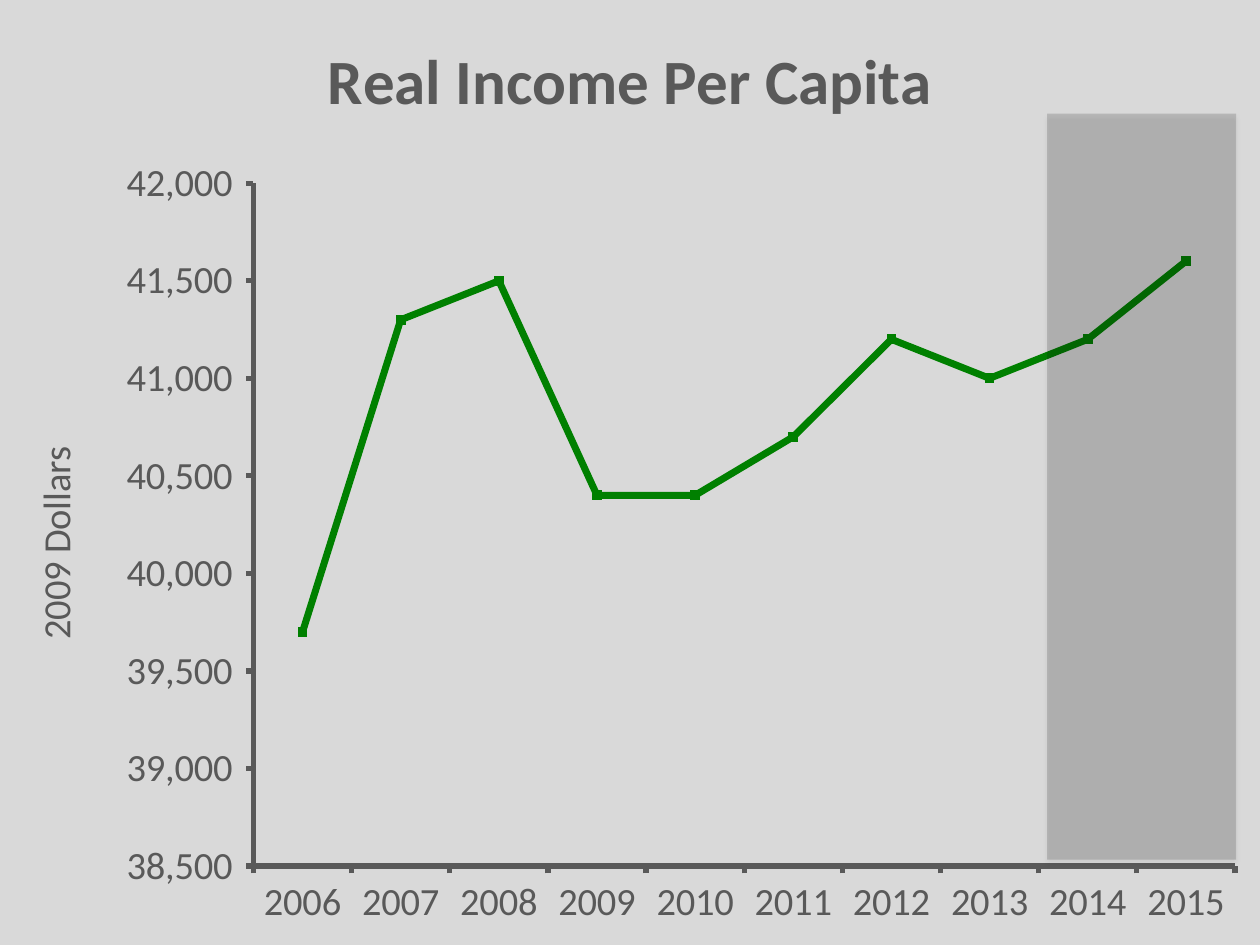
from lxml import etree
from pptx import Presentation
from pptx.chart.data import CategoryChartData
from pptx.dml.color import RGBColor
from pptx.enum import chart as ch, shapes
from pptx.oxml import parse_xml
from pptx.oxml.ns import nsdecls, qn
from pptx.util import Cm, Pt

TITLE = "Real Income Per Capita"
AXIS_TITLE = "2009 Dollars"
INCOME = {
    "2006": 39700, "2007": 41300, "2008": 41500, "2009": 40400, "2010": 40400,
    "2011": 40700, "2012": 41200, "2013": 41000, "2014": 41200, "2015": 41600,
}
SCALE = dict(low=38500, high=42000, step=500)
THEME = dict(font="Calibri", ink="595959", back="D9D9D9", line="008000",
             band="0D0D0D", title=36, label=22)
SLIDE = Cm(25.4), Cm(19.05)
BAND = Cm(21.11), Cm(2.29), Cm(3.81), Cm(15.04)
# Percent of the chart area
PLOT_AT = dict(x=20.12, y=19.4, w=77.9, h=72.25)
TITLE_AT = dict(x=25.1, y=2.67)
AXIS_TITLE_AT = dict(x=1.75, y=46.5)


def rgb(name):
    return RGBColor.from_string(THEME[name])


def style_font(font, size, bold=False):
    font.name, font.size, font.bold = THEME["font"], Pt(THEME[size]), bold
    font.color.rgb = rgb("ink")


def set_title(owner, title, wording, size, bold=False):
    """Write the title of a chart or axis and return its XML element."""
    r = title.text_frame.paragraphs[0].add_run()
    r.text = wording
    style_font(r.font, size, bold)
    return owner.find(qn("c:title"))


def place(element, at, index, inner=False):
    """Give a chart part a manual layout as its child number index."""
    for old in element.findall(qn("c:layout")):
        element.remove(old)
    layout = parse_xml(f"<c:layout {nsdecls('c')}><c:manualLayout/></c:layout>")
    manual = layout[0]
    if inner:
        etree.SubElement(manual, qn("c:layoutTarget")).set("val", "inner")
    for key in "xy":
        etree.SubElement(manual, qn(f"c:{key}Mode")).set("val", "edge")
    for key, percent in at.items():
        etree.SubElement(manual, qn(f"c:{key}")).set("val", f"{percent / 100:.4f}")
    element.insert(index, layout)


def back_fill():
    return parse_xml(
        f"<c:spPr {nsdecls('c', 'a')}><a:solidFill><a:srgbClr val=\"{THEME['back']}\"/>"
        "</a:solidFill><a:ln><a:noFill/></a:ln></c:spPr>")


def style_axis(axis):
    axis.has_major_gridlines = False
    axis.major_tick_mark = ch.XL_TICK_MARK.OUTSIDE
    axis.minor_tick_mark = ch.XL_TICK_MARK.NONE
    axis.format.line.color.rgb = rgb("ink")
    axis.format.line.width = Pt(3)
    style_font(axis.tick_labels.font, "label")


def add_income_chart(s):
    data = CategoryChartData()
    data.categories = list(INCOME)
    data.add_series("Series 1", list(INCOME.values()))
    chart = s.shapes.add_chart(ch.XL_CHART_TYPE.LINE_MARKERS, 0, 0, *SLIDE, data).chart
    chart_part = chart._chartSpace.find(qn("c:chart"))
    chart.has_legend = False
    style_font(chart.font, "label")

    heading = set_title(chart_part, chart.chart_title, TITLE, "title", bold=True)
    place(heading, TITLE_AT, 1)
    chart.chart_title.include_in_layout = False

    years, dollars = chart.category_axis, chart.value_axis
    for axis in (years, dollars):
        style_axis(axis)
    unit = set_title(dollars._element, dollars.axis_title, AXIS_TITLE, "label")
    place(unit, AXIS_TITLE_AT, 1)
    body = dollars.axis_title.text_frame._txBody.find(qn("a:bodyPr"))
    body.set("rot", "-5400000")
    body.set("vert", "horz")
    dollars.minimum_scale, dollars.maximum_scale = SCALE["low"], SCALE["high"]
    dollars.major_unit = SCALE["step"]
    dollars.tick_labels.number_format = "#,##0_)"
    dollars.tick_labels.number_format_is_linked = False

    income = chart.plots[0].series[0]
    income.smooth = False
    income.format.line.color.rgb = rgb("line")
    income.format.line.width = Pt(4)
    marker = income.marker
    marker.style, marker.size = ch.XL_MARKER_STYLE.SQUARE, 5
    marker.format.fill.solid()
    marker.format.fill.fore_color.rgb = rgb("line")
    marker.format.line.color.rgb = rgb("line")

    plot_area = chart_part.find(qn("c:plotArea"))
    place(plot_area, PLOT_AT, 0, inner=True)
    plot_area.append(back_fill())
    chart_part.addnext(back_fill())


def add_forecast_band(s):
    sp = s.shapes.add_shape(shapes.MSO_SHAPE.RECTANGLE, *BAND)
    sp.fill.solid()
    sp.fill.fore_color.rgb = rgb("band")
    sp.line.fill.background()
    color = sp._element.spPr.find(qn("a:solidFill"))[0]
    etree.SubElement(color, qn("a:alpha")).set("val", "16000")
    sp._element.spPr.append(parse_xml(
        f"<a:effectLst {nsdecls('a')}>"
        f'<a:outerShdw blurRad="{Pt(3.1)}" dist="{Pt(1.8)}" dir="5400000" rotWithShape="0">'
        '<a:srgbClr val="000000"><a:alpha val="35000"/></a:srgbClr>'
        "</a:outerShdw></a:effectLst>"))


def main():
    prs = Presentation()
    prs.slide_width, prs.slide_height = SLIDE
    s = prs.slides.add_slide(prs.slide_layouts[6])
    add_income_chart(s)
    add_forecast_band(s)
    prs.save("out.pptx")


if __name__ == "__main__":
    main()
